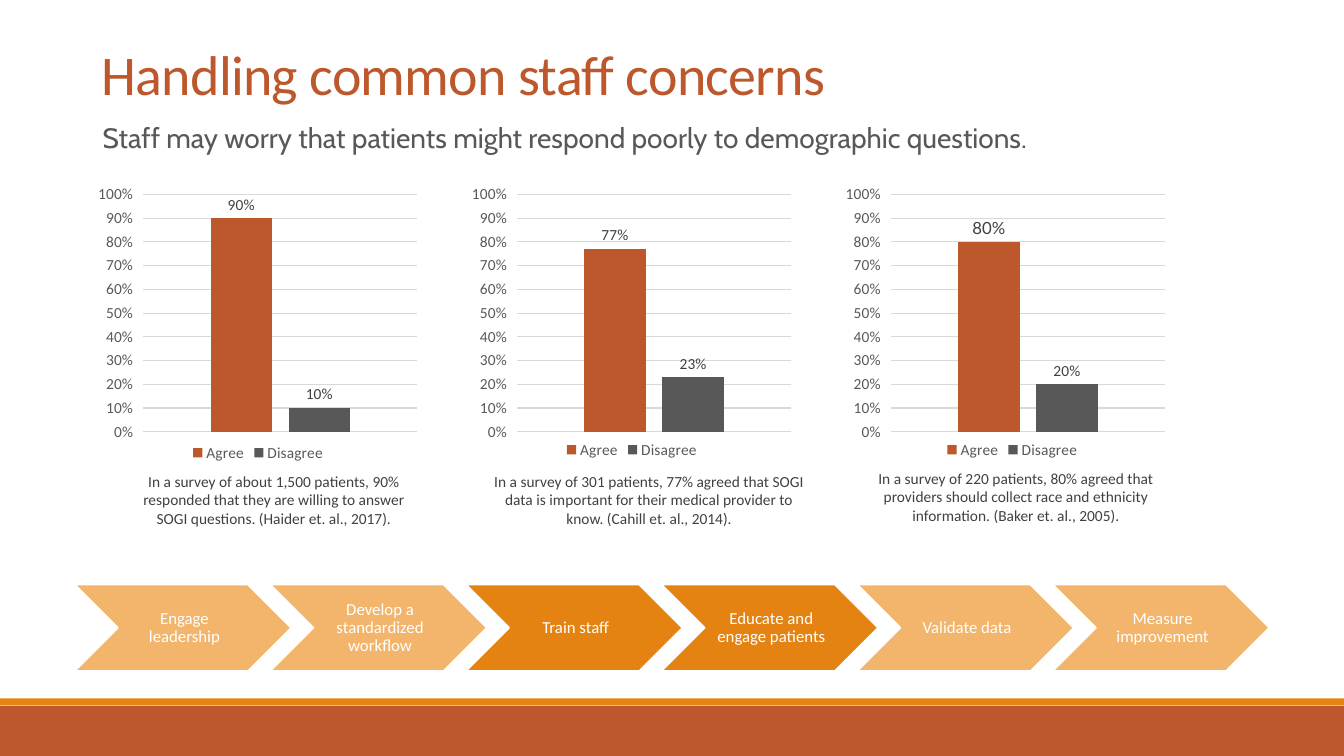
from dataclasses import dataclass

from lxml.etree import SubElement
from pptx import Presentation
from pptx.chart.data import CategoryChartData
from pptx.dml.color import RGBColor as RGB
from pptx.enum.chart import XL_CHART_TYPE as ChartType
from pptx.enum.chart import XL_LABEL_POSITION as LabelPos
from pptx.enum.chart import XL_LEGEND_POSITION as LegendPos
from pptx.enum.chart import XL_TICK_MARK as Tick
from pptx.enum.shapes import MSO_SHAPE as Shape
from pptx.enum.text import MSO_ANCHOR as Anchor
from pptx.enum.text import PP_ALIGN as Align
from pptx.oxml.ns import qn
from pptx.util import Cm, Pt


@dataclass(frozen=True)
class Theme:
    rust: str = "BD582C"
    orange: str = "E48312"
    pale: str = "F3B56C"
    grey: str = "585858"
    axis: str = "595959"
    ink: str = "404040"
    grid: str = "D9D9D9"
    white: str = "FFFFFF"
    font: str = "Calibri"
    intro_font: str = "Cabin"
    label_font: str = "Lato"
    title_size: float = 40
    intro_size: float = 20
    step_size: float = 12
    small: float = 11


T = Theme()


@dataclass(frozen=True)
class Box:
    """Left, top, width and height in centimetres."""
    x: float
    y: float
    w: float
    h: float

    def lengths(self) -> tuple:
        return Cm(self.x), Cm(self.y), Cm(self.w), Cm(self.h)


@dataclass(frozen=True)
class TextStyle:
    size: float
    color: str
    font: str = T.font
    align: Align = Align.LEFT
    anchor: Anchor = Anchor.TOP
    line: float = 1.0
    before: float = 0
    insets: tuple = (0.25, 0.13, 0.25, 0.13)


@dataclass(frozen=True)
class Survey:
    agree: float
    caption: str
    caption_box: Box
    legend_at: tuple
    agree_font: str = T.font
    agree_size: float = T.small


@dataclass(frozen=True)
class Step:
    text: str
    active: bool = False


TITLE = TextStyle(T.title_size, T.rust, anchor=Anchor.BOTTOM, line=0.85)
INTRO = TextStyle(T.intro_size, T.grey, T.intro_font, line=0.9, before=12,
                  insets=(0, 0.13, 0, 0.13))
CAPTION = TextStyle(T.small, T.ink, align=Align.CENTER, before=6)
STEP = TextStyle(T.step_size, T.white, align=Align.CENTER, anchor=Anchor.MIDDLE,
                 line=0.9, insets=(0.13, 0.05, 0.05, 0.05))

SURVEYS = [
    Survey(0.9, "In a survey of about 1,500 patients, 90% responded that they are "
           "willing to answer SOGI questions. (Haider et. al., 2017).",
           Box(3.07, 11.76, 7.67, 1.68), (0.29, 0.86)),
    Survey(0.77, "In a survey of 301 patients, 77% agreed that SOGI data is important "
           "for their medical provider to know. (Cahill et. al., 2014).",
           Box(12.17, 11.76, 8.38, 1.68), (0.29, 0.85)),
    Survey(0.8, "In a survey of 220 patients, 80% agreed that providers should collect "
           "race and ethnicity information. (Baker et. al., 2005).",
           Box(21.77, 11.68, 7.67, 1.68), (0.31, 0.85), T.label_font, 12),
]
STEPS = [
    Step("Engage leadership"),
    Step("Develop a standardized workflow"),
    Step("Train staff", True),
    Step("Educate and engage patients", True),
    Step("Validate data"),
    Step("Measure improvement"),
]
CHART_PITCH, STEP_PITCH = 9.42, 4.93


def set_font(font, size: float, color: str, name: str = T.font) -> None:
    font.size, font.name = Pt(size), name
    font.color.rgb = RGB.from_string(color)


def add_filled(shapes, kind: Shape, box: Box, fill: str, line: str = ""):
    sp = shapes.add_shape(kind, *box.lengths())
    sp.shadow.inherit = False
    sp.fill.solid()
    sp.fill.fore_color.rgb = RGB.from_string(fill)
    if line:
        sp.line.color.rgb = RGB.from_string(line)
        sp.line.width = Pt(1.25)
    else:
        sp.line.fill.background()
    return sp


def write(sp, text: str, style: TextStyle) -> None:
    tf = sp.text_frame
    tf.text = text
    tf.word_wrap = True
    tf.vertical_anchor = style.anchor
    tf.margin_left, tf.margin_top, tf.margin_right, tf.margin_bottom = map(Cm, style.insets)
    p = tf.paragraphs[0]
    p.alignment, p.line_spacing, p.space_before = style.align, style.line, Pt(style.before)
    set_font(p.runs[0].font, style.size, style.color, style.font)


def add_text(shapes, box: Box, text: str, style: TextStyle):
    sp = shapes.add_textbox(*box.lengths())
    write(sp, text, style)
    return sp


def place(element, index: int, **fractions: float) -> None:
    """Fix a chart part's position, as fractions of the chart's size."""
    for old in element.findall(qn("c:layout")):
        element.remove(old)
    layout = SubElement(element, qn("c:layout"))
    element.insert(index, layout)
    manual = SubElement(layout, qn("c:manualLayout"))
    if "w" in fractions:
        SubElement(manual, qn("c:layoutTarget")).set("val", "inner")
    for mode in ("xMode", "yMode"):
        SubElement(manual, qn(f"c:{mode}")).set("val", "edge")
    for name, value in fractions.items():
        SubElement(manual, qn(f"c:{name}")).set("val", str(value))


def add_survey_chart(shapes, box: Box, survey: Survey) -> None:
    data = CategoryChartData(number_format="0%")
    data.categories = ["1"]
    data.add_series("Agree", [survey.agree])
    data.add_series("Disagree", [round(1 - survey.agree, 2)])
    chart = shapes.add_chart(ChartType.COLUMN_CLUSTERED, *box.lengths(), data).chart
    set_font(chart.font, T.small, T.axis)
    chart.has_title = False
    chart.has_legend = True
    chart.legend.position = LegendPos.BOTTOM
    chart.legend.include_in_layout = False
    set_font(chart.legend.font, T.small, T.axis)

    chart.category_axis.visible = False
    axis = chart.value_axis
    axis.minimum_scale, axis.maximum_scale, axis.major_unit = 0, 1, 0.1
    axis.major_tick_mark = Tick.OUTSIDE
    axis.tick_labels.number_format = "0%"
    axis.tick_labels.number_format_is_linked = False
    set_font(axis.tick_labels.font, T.small, T.axis)
    axis.format.line.fill.background()
    grid = axis.major_gridlines.format.line
    grid.color.rgb = RGB.from_string(T.grid)
    grid.width = Pt(0.75)

    plot = chart.plots[0]
    plot.vary_by_categories = False
    plot.gap_width, plot.overlap = 219, -27
    looks = [(T.rust, survey.agree_size, survey.agree_font), (T.grey, T.small, T.font)]
    for series, (color, size, font) in zip(plot.series, looks):
        series.format.fill.solid()
        series.format.fill.fore_color.rgb = RGB.from_string(color)
        labels = series.data_labels
        labels.show_value = True
        labels.position = LabelPos.OUTSIDE_END
        labels.number_format = "0%"
        labels.number_format_is_linked = False
        set_font(labels.font, size, T.ink, font)

    area, legend = chart.element.xpath("//c:plotArea | //c:legend")
    place(area, 0, x=0.155, y=0.05, w=0.825, h=0.785)
    place(legend, 1, x=survey.legend_at[0], y=survey.legend_at[1])


def main() -> None:
    prs = Presentation()
    prs.slide_width, prs.slide_height = Cm(33.87), Cm(19.05)
    shapes = prs.slides.add_slide(prs.slide_layouts[6]).shapes

    add_filled(shapes, Shape.RECTANGLE, Box(0, 17.78, 33.87, 1.27), T.rust)
    add_filled(shapes, Shape.RECTANGLE, Box(0, 17.6, 33.87, 0.17), T.orange)
    title = add_text(shapes, Box(2.31, 1.07, 27.94, 1.75),
                     "Handling common staff concerns", TITLE)
    title.text_frame.paragraphs[0].runs[0].font._element.set("spc", "-50")
    intro = add_filled(shapes, Shape.RECTANGLE, Box(2.59, 3, 29.24, 12.62), T.white)
    write(intro, "Staff may worry that patients might respond poorly to "
          "demographic questions.", INTRO)

    for i, survey in enumerate(SURVEYS):
        add_survey_chart(shapes, Box(2.31 + i * CHART_PITCH, 4.52, 8.38, 7.62), survey)
    for survey in SURVEYS:
        add_text(shapes, survey.caption_box, survey.caption, CAPTION)

    process = shapes.add_group_shape().shapes
    for i, step in enumerate(STEPS):
        x = 1.88 + i * STEP_PITCH
        add_filled(process, Shape.CHEVRON, Box(x, 14.73, 5.46, 2.18),
                   T.orange if step.active else T.pale, T.white)
        add_text(process, Box(x + 1.09, 14.73, 3.28, 2.18), step.text, STEP)

    prs.save("out.pptx")


if __name__ == "__main__":
    main()
